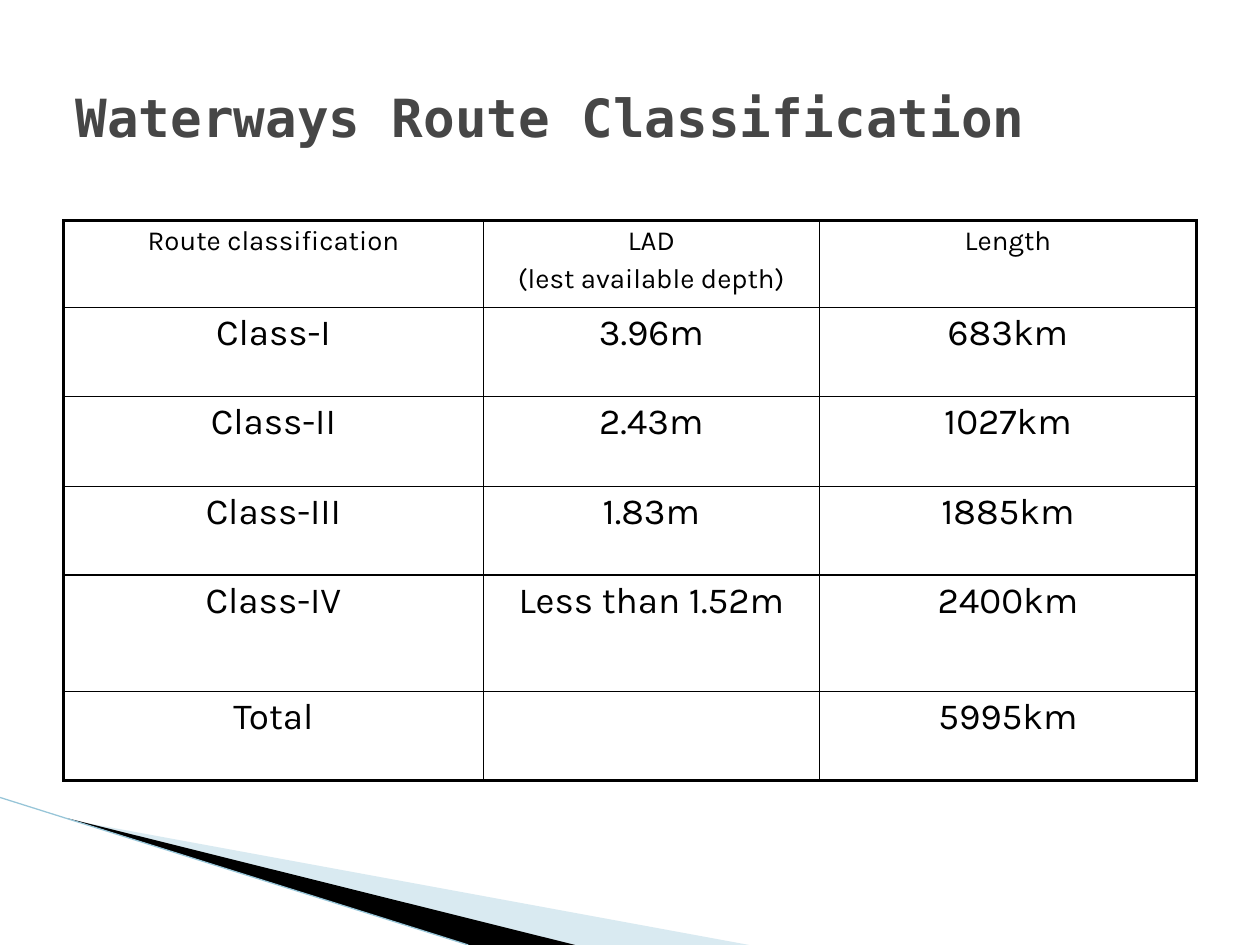
import lxml.etree
import pptx
import pptx.dml.color
import pptx.enum.shapes
import pptx.enum.text
import pptx.oxml.ns
import pptx.util

Pt = pptx.util.Pt
RGB = pptx.dml.color.RGBColor
BLACK = RGB(0x00, 0x00, 0x00)
GREY = RGB(0x46, 0x46, 0x46)
PALE = RGB(0xA0, 0xCB, 0xDC)
BLUE = RGB(0x97, 0xC5, 0xD8)

WIDE, HIGH = 959.04, 719.28
LEFT, SPAN = 48.24, 863.28
COLS = [319.7, 255.6, 287.28]
ROWS = [66.24, 67.68, 68.4, 67.68, 88.56, 67.68]
DATA = [
    ["Route classification", "LAD\n(lest available depth)", "Length"],
    ["Class-I", "3.96m", "683km"],
    ["Class-II", "2.43m", "1027km"],
    ["Class-III", "1.83m", "1885km"],
    ["Class-IV", "Less than 1.52m", "2400km"],
    ["Total", "", "5995km"],
]


def add_node(parent, tag, **attrs):
    node = lxml.etree.SubElement(parent, pptx.oxml.ns.qn(tag))
    for key, value in attrs.items():
        node.set(key, str(value))
    return node


def set_font(para, name, size, color, bold=False):
    font = para.font
    font.name, font.size, font.bold = name, Pt(size), bold
    font.color.rgb = color


def add_title(slide, text):
    title = slide.shapes.title
    title.left, title.top = Pt(LEFT), Pt(28.8)
    title.width, title.height = Pt(SPAN), Pt(119.52)
    frame = title.text_frame
    frame.text = text
    frame.word_wrap = True
    frame.auto_size = pptx.enum.text.MSO_AUTO_SIZE.NONE
    frame.vertical_anchor = pptx.enum.text.MSO_ANCHOR.MIDDLE
    frame.margin_left = frame.margin_right = Pt(9.4)
    frame.margin_top = frame.margin_bottom = Pt(5)
    para = frame.paragraphs[0]
    para.alignment = pptx.enum.text.PP_ALIGN.LEFT
    set_font(para, "DejaVu Sans Mono", 40, GREY, True)


def add_wedge(slide, points, color, alpha=100):
    start, *rest = [(Pt(x), Pt(y)) for x, y in points]
    pen = slide.shapes.build_freeform(*start)
    pen.add_line_segments(rest)
    wedge = pen.convert_to_shape()
    wedge.shadow.inherit = False
    wedge.line.fill.background()
    wedge.fill.solid()
    wedge.fill.fore_color.rgb = color
    if alpha < 100:
        tint = wedge.fill._xPr.find(".//" + pptx.oxml.ns.qn("a:srgbClr"))
        add_node(tint, "a:alpha", val=alpha * 1000)


def add_line(slide, start, end, color, width):
    kind = pptx.enum.shapes.MSO_CONNECTOR.STRAIGHT
    line = slide.shapes.add_connector(kind, *map(Pt, start + end))
    line.line.color.rgb = color
    line.line.width = Pt(width)
    add_node(line._element.spPr, "a:effectLst")


def set_edges(cell, edges):
    props = cell._tc.get_or_add_tcPr()
    for place, (side, width) in enumerate(edges.items()):
        edge = add_node(props, "a:ln" + side, w=Pt(width))
        fill = add_node(edge, "a:solidFill")
        add_node(fill, "a:srgbClr", val=BLACK)
        props.insert(place, edge)


def fill_cell(cell, text, size):
    cell.fill.background()
    cell.text = text
    for index, para in enumerate(cell.text_frame.paragraphs):
        para.alignment = pptx.enum.text.PP_ALIGN.CENTER
        if index:
            para.space_before = Pt(size * 0.2)
        set_font(para, "Karla", size, BLACK)


def add_grid(slide):
    frame = slide.shapes.add_table(
        len(ROWS), len(COLS), Pt(LEFT), Pt(167.76), Pt(SPAN), Pt(sum(ROWS)))
    table = frame.table
    table.first_row = table.horz_banding = False
    for column, width in zip(table.columns, COLS):
        column.width = Pt(width)
    for row, height in zip(table.rows, ROWS):
        row.height = Pt(height)
    for r, texts in enumerate(DATA):
        for c, text in enumerate(texts):
            cell = table.cell(r, c)
            fill_cell(cell, text, 28 if r else 21)
            outer = {"L": c == 0, "R": c == len(COLS) - 1,
                     "T": r == 0, "B": r == len(ROWS) - 1}
            set_edges(cell, {side: 2.25 if out else 1
                             for side, out in outer.items()})


def main():
    deck = pptx.Presentation()
    deck.slide_width, deck.slide_height = Pt(WIDE), Pt(HIGH)
    slide = deck.slides.add_slide(deck.slide_layouts[5])
    add_wedge(slide, [(52.56, 624), (570.24, HIGH), (437, HIGH)], PALE, 40)
    add_wedge(slide, [(51.12, 622.8), (437.8, HIGH), (356.4, HIGH)], BLACK)
    add_line(slide, (0, 607), (356.4, HIGH), BLUE, 0.95)
    add_title(slide, "Waterways Route Classification")
    add_grid(slide)
    deck.save("out.pptx")


if __name__ == "__main__":
    main()
